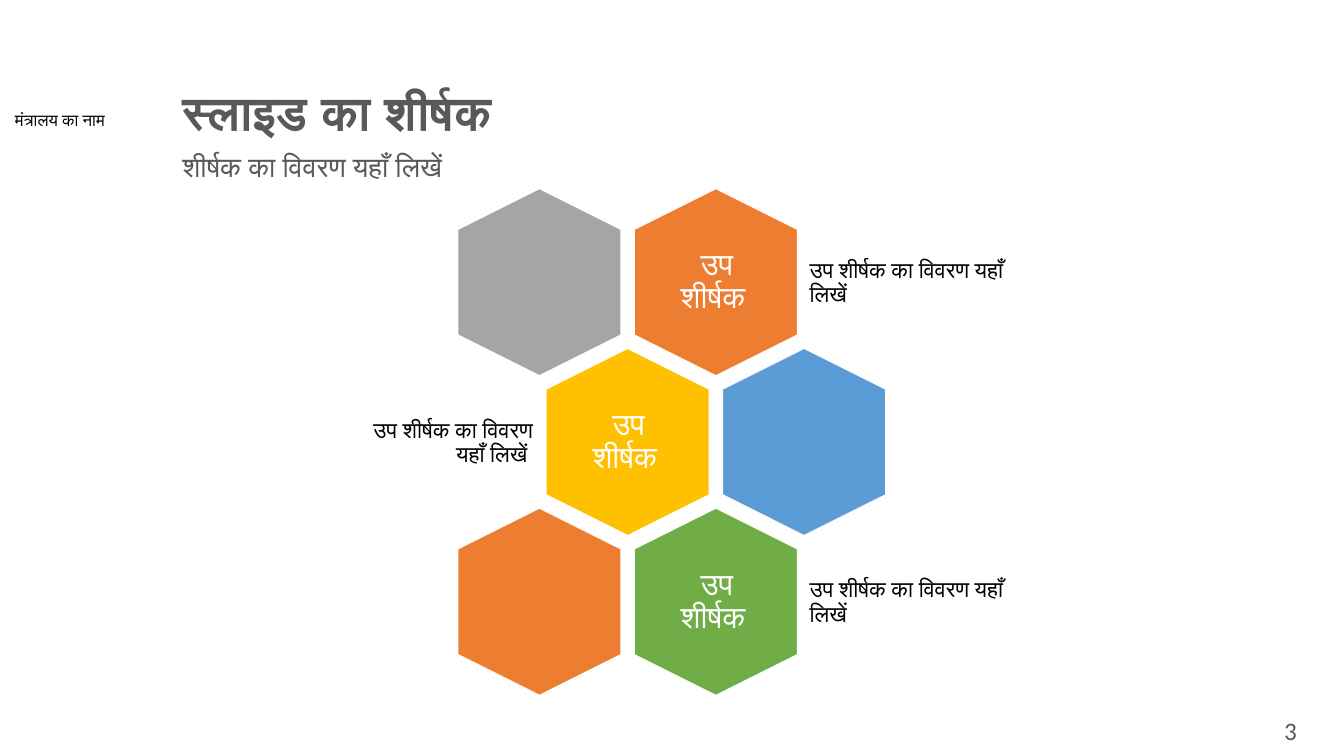
from dataclasses import dataclass

from pptx import Presentation
from pptx.dml.color import RGBColor
from pptx.enum.shapes import MSO_SHAPE as Shape
from pptx.enum.text import MSO_ANCHOR as Anchor, PP_ALIGN as Align
from pptx.util import Inches, Pt


@dataclass(frozen=True)
class Theme:
    font: str = "Calibri"
    black: str = "000000"
    white: str = "FFFFFF"
    heading: str = "595959"
    orange: str = "ED7D31"
    gray: str = "A5A5A5"
    gold: str = "FFC000"
    blue: str = "5B9BD5"
    green: str = "70AD47"
    title_size: int = 34
    caption_size: int = 22
    subtitle_size: int = 20
    number_size: int = 18
    detail_size: int = 16
    ministry_size: int = 12


THEME = Theme()

# Honeycomb geometry in inches; hexagons are wide before their quarter turn
HEX_WIDTH, HEX_HEIGHT = 1.86, 1.62
COLUMN_STEP, ROW_STEP = 1.75, 1.585

CAPTION = "उप शीर्षक "
DETAIL = "उप शीर्षक का विवरण यहाँ लिखें"

# Row, column, fill, detail text, side of the detail
CELLS = [
    (0, 1, THEME.orange, DETAIL, "right"),
    (0, 0, THEME.gray, None, None),
    (1, 0, THEME.gold, DETAIL + " ", "left"),
    (1, 1, THEME.blue, None, None),
    (2, 1, THEME.green, DETAIL, "right"),
    (2, 0, THEME.orange, None, None),
]


def add_text(slide, box, text, *, size, color=THEME.black, bold=False,
             align=Align.LEFT, anchor=Anchor.TOP, spacing=1.0, inset=None):
    frame = slide.shapes.add_textbox(*map(Inches, box)).text_frame
    frame.word_wrap = True
    frame.vertical_anchor = anchor
    if inset is not None:
        frame.margin_left = frame.margin_right = Inches(inset)
        frame.margin_top = frame.margin_bottom = Inches(inset)
    line = frame.paragraphs[0]
    line.alignment = align
    line.line_spacing = spacing
    run = line.add_run()
    run.text = text
    run.font.name = THEME.font
    run.font.size = Pt(size)
    run.font.bold = bold
    run.font.color.rgb = RGBColor.from_string(color)


def add_header(slide, left, top, width):
    add_text(slide, (left, top, width, 0.55), "स्लाइड का शीर्षक",
             size=THEME.title_size, color=THEME.heading, bold=True, spacing=0.9)
    add_text(slide, (left, top + 0.63, width, 0.63), "शीर्षक का विवरण यहाँ लिखें",
             size=THEME.subtitle_size, color=THEME.heading, spacing=0.9)


def add_cell(slide, left, top, fill, detail, side):
    hexagon = slide.shapes.add_shape(
        Shape.HEXAGON, *map(Inches, (left, top, HEX_WIDTH, HEX_HEIGHT)))
    hexagon.rotation = 90
    hexagon.adjustments[0] = 0.25
    hexagon.shadow.inherit = False
    hexagon.fill.solid()
    hexagon.fill.fore_color.rgb = RGBColor.from_string(fill)
    hexagon.line.color.rgb = RGBColor.from_string(THEME.white)
    hexagon.line.width = Pt(1)
    if detail is None:
        return

    # Caption inside the hexagon, detail beside it
    add_text(slide, (left + 0.38, top + 0.17, 1.12, 1.28), CAPTION,
             size=THEME.caption_size, color=THEME.white, align=Align.CENTER,
             anchor=Anchor.MIDDLE, spacing=0.9, inset=0.09)
    if side == "right":
        offset, width, align = 1.79, 2.08, Align.LEFT
    else:
        offset, width, align = -1.95, 2.01, Align.RIGHT
    add_text(slide, (left + offset, top + 0.26, width, 1.12), detail,
             size=THEME.detail_size, align=align, anchor=Anchor.MIDDLE,
             spacing=0.9, inset=0.07)


def add_honeycomb(slide, left, top):
    for row, column, fill, detail, side in CELLS:
        # Odd rows sit half a step to the right
        shift = column + row % 2 / 2
        add_cell(slide, left + shift * COLUMN_STEP, top + row * ROW_STEP,
                 fill, detail, side)


def main():
    deck = Presentation()
    deck.slide_width, deck.slide_height = Inches(13.33), Inches(7.5)
    slide = deck.slides.add_slide(deck.slide_layouts[6])

    # Ministry name
    add_text(slide, (0.05, 1.04, 1.52, 0.3), "मंत्रालय का नाम",
             size=THEME.ministry_size)
    add_honeycomb(slide, 4.42, 1.99)
    add_header(slide, 1.71, 0.84, 9.61)
    # Slide number
    add_text(slide, (12.26, 7.05, 1.08, 0.45), "3", size=THEME.number_size,
             color=THEME.heading, align=Align.CENTER)

    deck.save("out.pptx")


if __name__ == "__main__":
    main()
